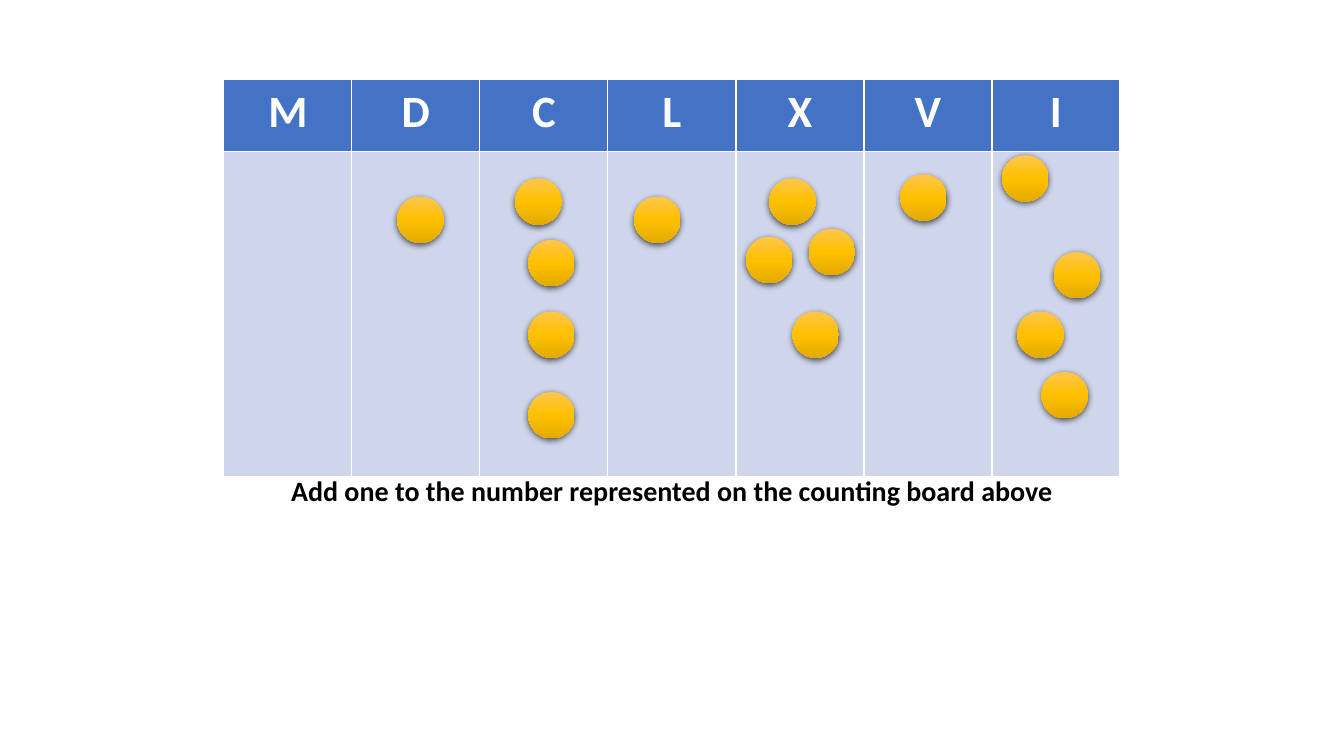
"""Build a slide with a Roman counting board, its counters and a task."""
from lxml.etree import SubElement
from pptx import Presentation
from pptx.dml.color import RGBColor
from pptx.enum.shapes import MSO_SHAPE
from pptx.enum.text import MSO_AUTO_SIZE, PP_ALIGN
from pptx.oxml.ns import qn
from pptx.util import Inches, Pt

TASK = "Add one to the number represented on the counting board above"
BOARD = {
    "M": [],
    "D": [(0.45, 0.45)],
    "C": [(0.35, 0.27), (0.48, 0.88), (0.48, 1.59), (0.48, 2.39)],
    "L": [(0.26, 0.45)],
    "X": [(0.33, 0.27), (0.72, 0.77), (0.10, 0.85), (0.56, 1.59)],
    "V": [(0.36, 0.23)],
    "I": [(0.10, 0.04), (0.61, 1.00), (0.25, 1.59), (0.49, 2.19)],
}
COLORS = {"header": "4472C4", "body": "CFD5EA", "white": "FFFFFF", "black": "000000"}
COIN_STOPS = {0: "FFC64B", 50: "FFC000", 100: "E3AB00"}
FONT = "Calibri"
LEFT, TOP = 2.22, 0.79
COL_W, HEADER_H, BODY_H = 1.27, 0.71, 3.23
COIN = 0.46


def write(tf, text, size=20, color="black"):
    """Put one bold centred line into a text frame."""
    p = tf.paragraphs[0]
    p.alignment = PP_ALIGN.CENTER
    r = p.add_run()
    r.text = text
    r.font.name, r.font.size, r.font.bold = FONT, Pt(size), True
    r.font.color.rgb = RGBColor.from_string(COLORS[color])


def add_color(parent, value):
    """Add an RGB colour element."""
    return SubElement(parent, qn("a:srgbClr"), val=value)


def add_coin(s, x, y):
    """Draw one golden counter with a soft shadow."""
    sp = s.shapes.add_shape(MSO_SHAPE.OVAL, Inches(x), Inches(y), Inches(COIN), Inches(COIN))
    sp.fill.gradient()
    sp.fill.gradient_angle = 270
    stops = sp._element.spPr.find(".//" + qn("a:gsLst"))
    for stop in list(stops):
        stops.remove(stop)
    for share, color in COIN_STOPS.items():
        add_color(SubElement(stops, qn("a:gs"), pos=str(share * 1000)), color)
    sp.line.fill.background()
    sp.shadow.inherit = False
    effects = sp._element.spPr.find(qn("a:effectLst"))
    shadow = SubElement(effects, qn("a:outerShdw"), blurRad=str(Pt(4.5)), dist=str(Pt(1.5)),
                        dir="5400000", algn="ctr", rotWithShape="0")
    SubElement(add_color(shadow, COLORS["black"]), qn("a:alpha"), val="63000")


def add_board(s):
    """Draw the table and place the counters in its columns."""
    width = COL_W * len(BOARD)
    table = s.shapes.add_table(2, len(BOARD), Inches(LEFT), Inches(TOP),
                               Inches(width), Inches(HEADER_H + BODY_H)).table
    for row, height in zip(table.rows, (HEADER_H, BODY_H)):
        row.height = Inches(height)
    for i, (letter, coins) in enumerate(BOARD.items()):
        table.columns[i].width = Inches(COL_W)
        for row, name in enumerate(("header", "body")):
            fill = table.cell(row, i).fill
            fill.solid()
            fill.fore_color.rgb = RGBColor.from_string(COLORS[name])
        write(table.cell(0, i).text_frame, letter, size=32, color="white")
        for dx, dy in coins:
            add_coin(s, LEFT + i * COL_W + dx, TOP + HEADER_H + dy)


def main():
    """Build and save the slide."""
    prs = Presentation()
    prs.slide_width, prs.slide_height = Inches(13.33), Inches(7.5)
    s = prs.slides.add_slide(prs.slide_layouts[6])
    add_board(s)
    tf = s.shapes.add_textbox(Inches(LEFT), Inches(4.65),
                              Inches(COL_W * len(BOARD)), Inches(0.44)).text_frame
    tf.word_wrap = True
    tf.auto_size = MSO_AUTO_SIZE.SHAPE_TO_FIT_TEXT
    write(tf, TASK)
    prs.save("out.pptx")


if __name__ == "__main__":
    main()
